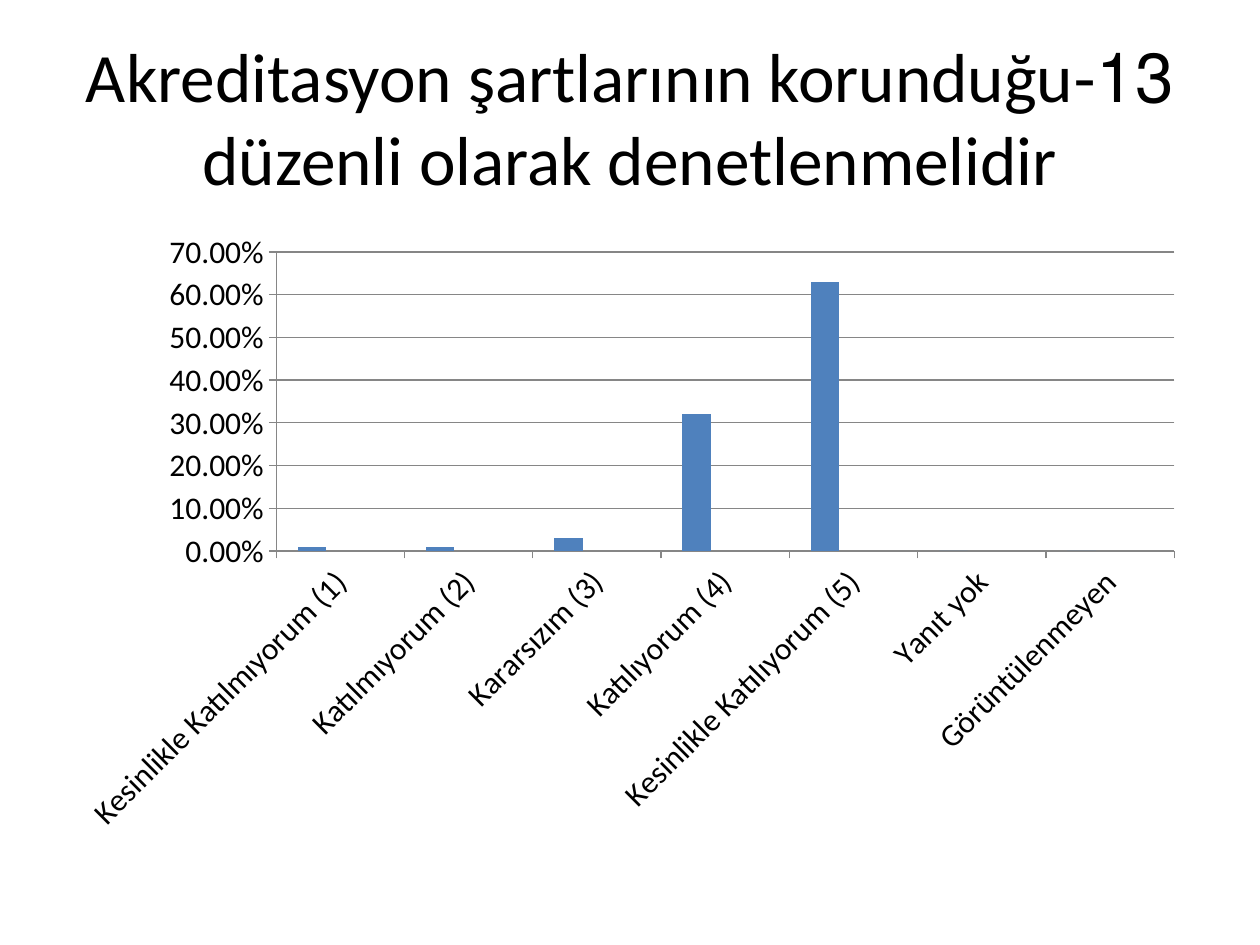
"""Build the survey slide on regular accreditation checks."""
from pptx import Presentation
from pptx.chart.data import CategoryChartData
from pptx.dml.color import RGBColor
from pptx.enum import chart as ch, text as tx
from pptx.util import Inches, Pt

BLACK = RGBColor(0x00, 0x00, 0x00)
GREY = RGBColor(0x86, 0x86, 0x86)
BLUE = RGBColor(0x4F, 0x81, 0xBD)
RED = RGBColor(0xC0, 0x50, 0x4D)
GREEN = RGBColor(0x9B, 0xBB, 0x59)

QUESTION = "13-Akreditasyon şartlarının korunduğu düzenli olarak denetlenmelidir"
ANSWERS = {
    "Kesinlikle Katılmıyorum (1)": 0.01,
    "Katılmıyorum (2)": 0.01,
    "Kararsızım (3)": 0.03,
    "Katılıyorum (4)": 0.32,
    "Kesinlikle Katılıyorum (5)": 0.63,
    "Yanıt yok": 0,
    "Görüntülenmeyen": 0,
}


def apply(target, formats):
    for key, value in formats.items():
        setattr(target, key, value)


class SurveySlide:
    """Holds the style and the current slide."""

    font_name = "Calibri"

    def __init__(self, deck):
        self.slide = deck.slides.add_slide(deck.slide_layouts[5])

    def style_font(self, font, size):
        apply(font, {"name": self.font_name, "size": Pt(size)})
        font.color.rgb = BLACK

    def title(self, wording, left, top, width, height):
        heading = self.slide.shapes.title
        apply(heading, {"left": Inches(left), "top": Inches(top),
                        "width": Inches(width), "height": Inches(height)})
        frame = heading.text_frame
        frame.text = wording
        apply(frame, {"word_wrap": True, "auto_size": tx.MSO_AUTO_SIZE.NONE,
                      "vertical_anchor": tx.MSO_ANCHOR.MIDDLE})
        line = frame.paragraphs[0]
        line.alignment = tx.PP_ALIGN.CENTER
        line._p.get_or_add_pPr().set("rtl", "1")
        self.style_font(line.runs[0].font, 39.6)

    def column_chart(self, answers, colors, left, top, width, height):
        data = CategoryChartData(number_format="0.00%")
        data.categories = list(answers)
        blank = [None] * len(answers)
        for number, _ in enumerate(colors, 1):
            shares = list(answers.values()) if number == 1 else blank
            data.add_series(f"Series {number}", shares)
        chart = self.slide.shapes.add_chart(
            ch.XL_CHART_TYPE.COLUMN_CLUSTERED, Inches(left), Inches(top),
            Inches(width), Inches(height), data).chart
        apply(chart, {"has_legend": False, "has_title": False})
        self.style_font(chart.font, 18)

        plot = chart.plots[0]
        apply(plot, {"gap_width": 150, "overlap": 0, "vary_by_categories": False})
        for series, color in zip(plot.series, colors):
            series.format.fill.solid()
            series.format.fill.fore_color.rgb = color

        shares_axis = chart.value_axis
        apply(shares_axis, {"minimum_scale": 0, "maximum_scale": 0.7,
                            "major_unit": 0.1, "has_major_gridlines": True})
        apply(shares_axis.tick_labels, {"number_format": "0.00%",
                                        "number_format_is_linked": False})
        for axis in (chart.category_axis, shares_axis):
            apply(axis, {"major_tick_mark": ch.XL_TICK_MARK.OUTSIDE,
                         "minor_tick_mark": ch.XL_TICK_MARK.NONE})
        for part in (chart.category_axis, shares_axis, shares_axis.major_gridlines):
            part.format.line.color.rgb = GREY
            part.format.line.width = Pt(0.75)


def main():
    deck = Presentation()
    apply(deck, {"slide_width": Inches(10), "slide_height": Inches(7.5)})
    survey = SurveySlide(deck)
    survey.title(QUESTION, 0.5, 0.3, 9, 1.25)
    survey.column_chart(ANSWERS, (BLUE, RED, GREEN), 0.5, 1.75, 9, 4.95)
    deck.save("out.pptx")


if __name__ == "__main__":
    main()
